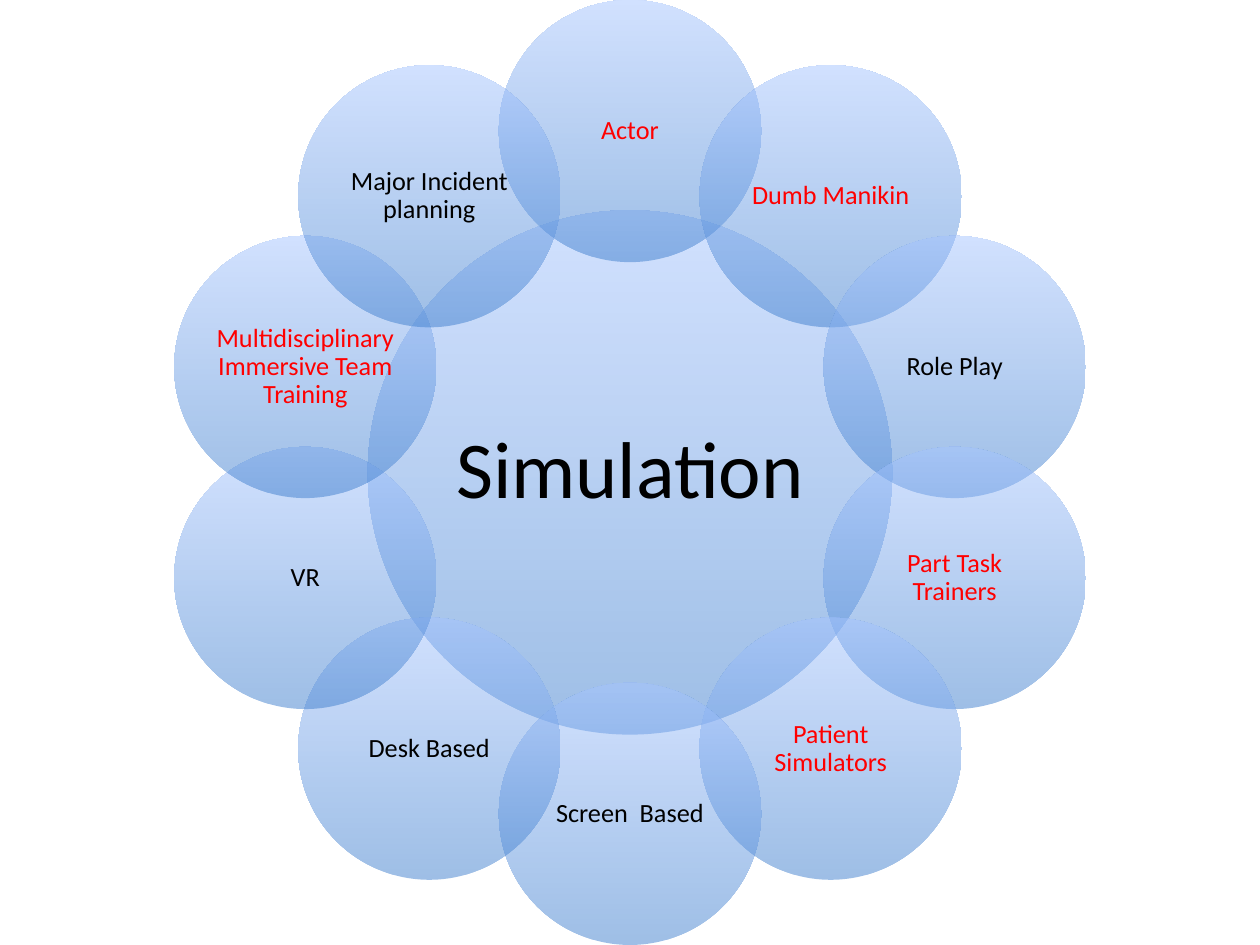
import math

from lxml import etree
from pptx import Presentation
from pptx.dml.color import RGBColor
from pptx.enum.shapes import MSO_SHAPE
from pptx.enum.text import MSO_ANCHOR, PP_ALIGN
from pptx.oxml.ns import qn
from pptx.util import Cm, Pt

OVAL = MSO_SHAPE.OVAL
MIDDLE = MSO_ANCHOR.MIDDLE
CENTER = PP_ALIGN.CENTER

COLORS = {"deep": "3F7FCE", "pale": "A4C4FF", "black": "000000", "red": "FF0000"}

WIDTH, HEIGHT = 25.4, 19.05
HUB_DIAMETER = 10.57
PETAL_DIAMETER = HUB_DIAMETER / 2
RING_RADIUS = (HEIGHT - PETAL_DIAMETER) / 2

# Clockwise from the top
PETALS = [
    ("Actor", "red"),
    ("Dumb Manikin", "red"),
    ("Role Play", "black"),
    ("Part Task Trainers", "red"),
    ("Patient Simulators", "red"),
    ("Screen  Based", "black"),
    ("Desk Based", "black"),
    ("VR", "black"),
    ("Multidisciplinary Immersive Team Training", "red"),
    ("Major Incident planning", "black"),
]


class Deck:
    """Holds the style and the current slide."""

    font = "Calibri"
    opacity = 50

    def __init__(self, slide):
        self.slide = slide

    def rgb(self, name):
        return RGBColor.from_string(COLORS[name])

    def fill_gradient(self, s):
        """Half-transparent fill, deep at the bottom and pale at the top."""
        s.fill.gradient()
        s.fill.gradient_angle = 90
        for stop, name in zip(s.fill.gradient_stops, ("deep", "pale")):
            stop.color.rgb = self.rgb(name)
        for color in s._element.spPr.iter(qn("a:srgbClr")):
            etree.SubElement(color, qn("a:alpha"), val=str(self.opacity * 1000))

    def circle(self, x, y, diameter, text, size, color, inset):
        """Add a labelled circle centred on x, y."""
        s = self.slide.shapes.add_shape(
            OVAL, Cm(x - diameter / 2), Cm(y - diameter / 2), Cm(diameter), Cm(diameter)
        )
        s.shadow.inherit = False
        s.line.fill.background()
        self.fill_gradient(s)
        tf = s.text_frame
        tf.text = text
        tf.word_wrap = True
        tf.vertical_anchor = MIDDLE
        tf.margin_left = tf.margin_right = tf.margin_top = tf.margin_bottom = Cm(inset)
        p = tf.paragraphs[0]
        p.alignment = CENTER
        p.line_spacing = 0.9
        font = p.runs[0].font
        font.name, font.size, font.color.rgb = self.font, Pt(size), self.rgb(color)


def main():
    prs = Presentation()
    prs.slide_width, prs.slide_height = Cm(WIDTH), Cm(HEIGHT)
    deck = Deck(prs.slides.add_slide(prs.slide_layouts[6]))

    cx, cy = WIDTH / 2, HEIGHT / 2
    deck.circle(cx, cy, HUB_DIAMETER, "Simulation", 46, "black", 0.15)
    for i, (text, color) in enumerate(PETALS):
        angle = math.tau * i / len(PETALS)
        x = cx + RING_RADIUS * math.sin(angle)
        y = cy - RING_RADIUS * math.cos(angle)
        deck.circle(x, y, PETAL_DIAMETER, text, 15, color, 0.05)

    prs.save("out.pptx")


if __name__ == "__main__":
    main()
